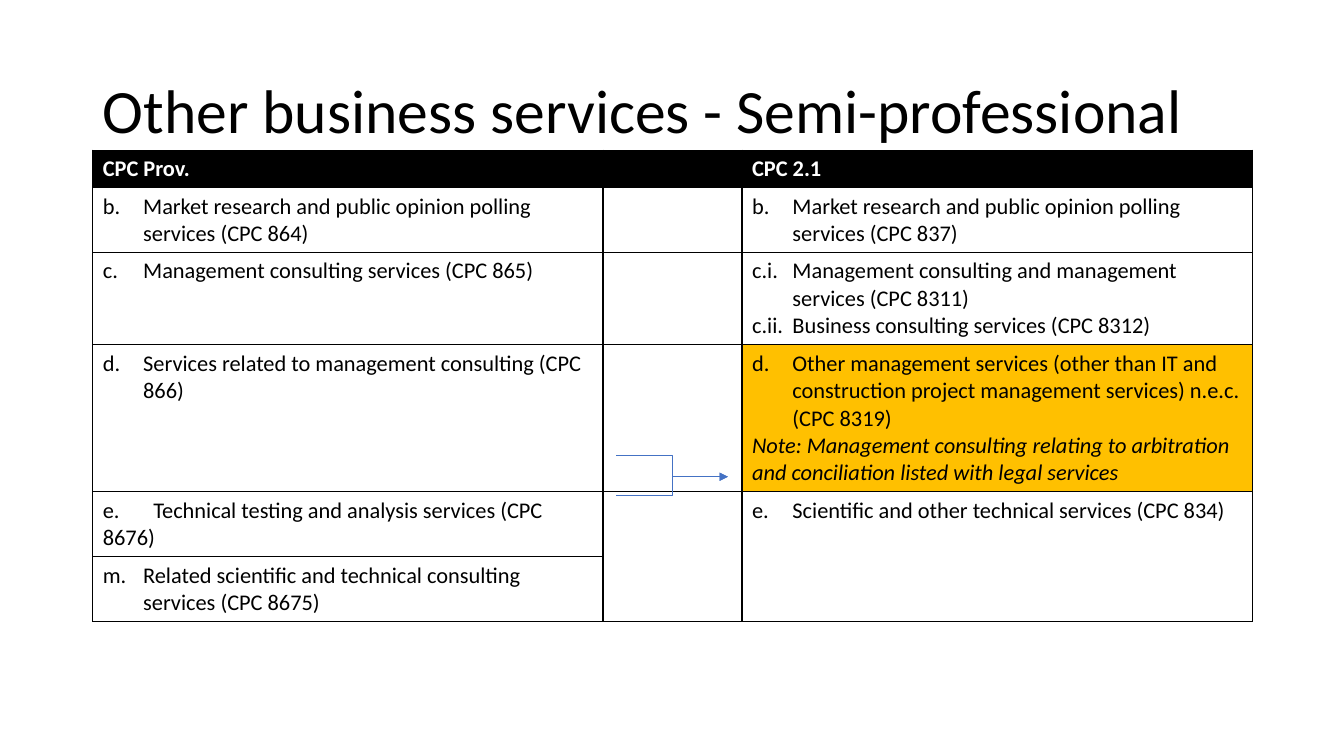
import pptx
import pptx.dml.color
import pptx.enum.shapes
import pptx.enum.text
import pptx.oxml.ns
import pptx.util
from lxml import etree
from pptx.util import Inches

BLACK, WHITE, AMBER, BLUE = "000000", "FFFFFF", "FFC000", "4472C4"
COLUMN_WIDTHS = (5.06, 1.38, 5.06)
ROW_HEIGHTS = (0.36, 0.64, 0.91, 1.45, 0.64, 0.64)
NOTE = "Note: "
NUMBERED = "Other management"
UNINDENTED = "e.\tTechnical"

# Each row holds the paragraphs of its left and right cells.
SERVICES = [
    (["CPC Prov."], ["CPC 2.1"]),
    (["b.\tMarket research and public opinion polling services (CPC 864)"],
     ["b.\tMarket research and public opinion polling services (CPC 837)"]),
    (["c.\tManagement consulting services (CPC 865)"],
     ["c.i.\tManagement consulting and management services (CPC 8311)",
      "c.ii.\tBusiness consulting services (CPC 8312)"]),
    (["d.\tServices related to management consulting (CPC 866)"],
     ["Other management services (other than IT and construction project "
      "management services) n.e.c. (CPC 8319)",
      "Note: Management consulting relating to arbitration and conciliation "
      "listed with legal services"]),
    (["e.\tTechnical testing and analysis services (CPC 8676)"],
     ["e.\tScientific and other technical services (CPC 834)"]),
    (["m.\tRelated scientific and technical consulting services (CPC 8675)"], []),
]


def rgb(value):
    return pptx.dml.color.RGBColor.from_string(value)


def add_xml(parent, tag, **attributes):
    return etree.SubElement(parent, pptx.oxml.ns.qn(tag), attributes)


class SlideBuilder:
    font = "Calibri"
    title_size = 44
    table_size = 16

    def __init__(self, deck):
        self.slide = deck.slides.add_slide(deck.slide_layouts[5])

    def style(self, paragraph, size, color, bold=False, italic=False):
        for span in paragraph.runs:
            span.font.name = self.font
            span.font.size = pptx.util.Pt(size)
            span.font.bold = bold
            span.font.italic = italic
            span.font.color.rgb = rgb(color)

    def title(self, text, left, top, width, height):
        box = self.slide.shapes.title
        box.left, box.top = Inches(left), Inches(top)
        box.width, box.height = Inches(width), Inches(height)
        frame = box.text_frame
        frame.text = text
        frame.word_wrap = True
        frame.auto_size = pptx.enum.text.MSO_AUTO_SIZE.NONE
        frame.vertical_anchor = pptx.enum.text.MSO_ANCHOR.MIDDLE
        paragraph = frame.paragraphs[0]
        paragraph.alignment = pptx.enum.text.PP_ALIGN.LEFT
        paragraph.line_spacing = 0.9
        self.style(paragraph, self.title_size, BLACK)

    def hang(self, paragraph, numbered):
        """Indent the text behind its letter, which is typed or automatic."""
        properties = paragraph._p.get_or_add_pPr()
        indent = Inches(0.4)
        properties.set("marL", str(indent))
        properties.set("indent", str(-indent))
        if numbered:
            add_xml(properties, "a:buAutoNum", type="alphaLcPeriod", startAt="4")
        tabs = add_xml(properties, "a:tabLst")
        add_xml(tabs, "a:tab", pos=str(indent), algn="l")

    def borders(self, cell):
        properties = cell._tc.get_or_add_tcPr()
        for position, side in enumerate(("a:lnL", "a:lnR", "a:lnT", "a:lnB")):
            line = add_xml(properties, side, w=str(pptx.util.Pt(1)))
            add_xml(add_xml(line, "a:solidFill"), "a:srgbClr", val=BLACK)
            properties.insert(position, line)

    def cell(self, cell, texts, fill, header):
        cell.fill.solid()
        cell.fill.fore_color.rgb = rgb(fill)
        self.borders(cell)
        frame = cell.text_frame
        if not texts:
            add_xml(frame.paragraphs[0]._p, "a:endParaRPr",
                    sz=str(self.table_size * 100))
        for index, text in enumerate(texts):
            paragraph = frame.add_paragraph() if index else frame.paragraphs[0]
            paragraph.text = text
            note = text.startswith(NOTE)
            if not (header or note or text.startswith(UNINDENTED)):
                self.hang(paragraph, text.startswith(NUMBERED))
            self.style(paragraph, self.table_size, WHITE if header else BLACK,
                       bold=header, italic=note)

    def table(self, rows, left, top):
        table = self.slide.shapes.add_table(
            len(rows), len(COLUMN_WIDTHS), Inches(left), Inches(top),
            Inches(sum(COLUMN_WIDTHS)), Inches(sum(ROW_HEIGHTS))).table
        table.horz_banding = False
        for column, width in zip(table.columns, COLUMN_WIDTHS):
            column.width = Inches(width)
        for row, height in zip(table.rows, ROW_HEIGHTS):
            row.height = Inches(height)
        for row, (before, after) in enumerate(rows):
            header = row == 0
            for column, texts in enumerate((before, [], after)):
                changed = any(text.startswith(NOTE) for text in texts)
                fill = BLACK if header else AMBER if changed else WHITE
                self.cell(table.cell(row, column), texts, fill, header)
        for column in (1, 2):
            table.cell(4, column).merge(table.cell(5, column))

    def elbow_arrow(self, start, end):
        arrow = self.slide.shapes.add_connector(
            pptx.enum.shapes.MSO_CONNECTOR.ELBOW,
            *(Inches(value) for value in start + end))
        arrow.line.color.rgb = rgb(BLUE)
        arrow.line.width = pptx.util.Pt(0.5)
        add_xml(arrow.line._get_or_add_ln(), "a:tailEnd", type="triangle")
        add_xml(arrow._element.spPr, "a:effectLst")


def main():
    deck = pptx.Presentation()
    deck.slide_width, deck.slide_height = Inches(13.33), Inches(7.5)
    builder = SlideBuilder(deck)
    builder.title("Other business services - Semi-professional",
                  0.92, 0.4, 11.5, 1.45)
    builder.table(SERVICES, 0.92, 1.49)
    for start_y in (4.52, 4.91):
        builder.elbow_arrow((6.11, start_y), (7.22, 4.73))
    deck.save("out.pptx")


if __name__ == "__main__":
    main()
